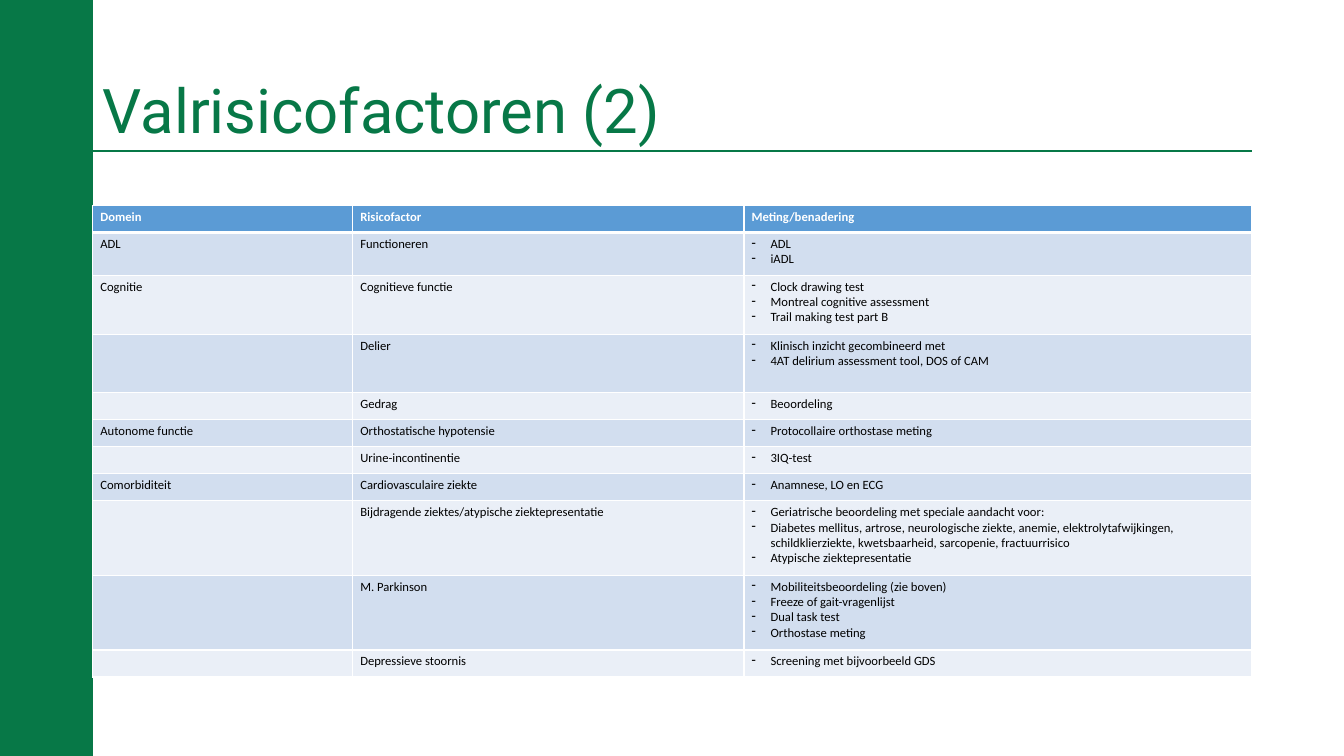
"""Build the slide on fall risk factors: a titled page with one table."""
import pptx
import pptx.dml.color
import pptx.enum.shapes
import pptx.enum.text
import pptx.oxml.ns
import pptx.util
from lxml import etree
from pptx.util import Cm, Pt

GREEN, BLUE, WHITE, BLACK = "077847", "5B9BD5", "FFFFFF", "000000"
BANDS = ("D2DEEF", "EAEFF7")

HEADER = ("Domein", "Risicofactor", "Meting/benadering")
RISK_FACTORS = [
    ("ADL", "Functioneren", 2, ["ADL", "iADL"]),
    ("Cognitie", "Cognitieve functie", 3,
     ["Clock drawing test", "Montreal cognitive assessment", "Trail making test part B"]),
    ("", "Delier", 3,
     ["Klinisch inzicht gecombineerd met", "4AT delirium assessment tool, DOS of CAM"]),
    ("", "Gedrag", 1, ["Beoordeling"]),
    ("Autonome functie", "Orthostatische hypotensie", 1, ["Protocollaire orthostase meting"]),
    ("", "Urine-incontinentie", 1, ["3IQ-test"]),
    ("Comorbiditeit", "Cardiovasculaire ziekte", 1, ["Anamnese, LO en ECG"]),
    ("", "Bijdragende ziektes/atypische ziektepresentatie", 4,
     ["Geriatrische beoordeling met speciale aandacht voor:",
      "Diabetes mellitus, artrose, neurologische ziekte, anemie, elektrolytafwijkingen, "
      "schildklierziekte, kwetsbaarheid, sarcopenie, fractuurrisico",
      "Atypische ziektepresentatie"]),
    ("", "M. Parkinson", 4,
     ["Mobiliteitsbeoordeling (zie boven)", "Freeze of gait-vragenlijst",
      "Dual task test", "Orthostase meting"]),
    ("", "Depressieve stoornis", 1, ["Screening met bijvoorbeeld GDS"]),
]


def color(value):
    return pptx.dml.color.RGBColor.from_string(value)


def add_element(parent, tag, **attributes):
    return etree.SubElement(parent, pptx.oxml.ns.qn(tag), attributes)


class RiskSlide:
    """Hold the style and the current page, and draw its elements."""

    title_font, table_font, table_size = "Roboto", "Calibri", 9
    row_padding, line_height = 0.28, 0.4

    def __init__(self, page):
        self.page = page

    def panel(self, left, top, width, height, fill):
        box = self.page.shapes.add_shape(
            pptx.enum.shapes.MSO_SHAPE.RECTANGLE, Cm(left), Cm(top), Cm(width), Cm(height))
        box.shadow.inherit = False
        box.fill.solid()
        box.fill.fore_color.rgb = color(fill)
        box.line.fill.background()

    def rule(self, left, right, top, stroke):
        line = self.page.shapes.add_connector(
            pptx.enum.shapes.MSO_CONNECTOR.STRAIGHT, Cm(left), Cm(top), Cm(right), Cm(top))
        line.line.color.rgb = color(stroke)
        line.line.width = Pt(1.5)
        add_element(line._element.spPr, "a:effectLst")

    def title(self, text, left, top, width, height):
        box = self.page.shapes.add_textbox(Cm(left), Cm(top), Cm(width), Cm(height))
        frame = box.text_frame
        frame.word_wrap = True
        frame.vertical_anchor = pptx.enum.text.MSO_ANCHOR.MIDDLE
        para = frame.paragraphs[0]
        para.text = text
        para.line_spacing = 0.9
        self.style(para, self.title_font, 44, GREEN)

    def style(self, para, name, size, ink, bold=False):
        font = para.font
        font.name, font.size, font.bold = name, Pt(size), bold
        font.color.rgb = color(ink)

    def cell(self, cell, lines, fill, ink, bold=False, bullets=False, top=1, bottom=1):
        cell.margin_left = cell.margin_right = Cm(0.19)
        cell.margin_top = cell.margin_bottom = Cm(0.1)
        properties = cell._tc.get_or_add_tcPr()
        for side, width in zip("LRTB", (1, 1, top, bottom)):
            border = add_element(properties, f"a:ln{side}", w=str(Pt(width)))
            add_element(add_element(border, "a:solidFill"), "a:srgbClr", val=WHITE)
        cell.fill.solid()
        cell.fill.fore_color.rgb = color(fill)
        cell.text = "\n".join(lines)
        for para in cell.text_frame.paragraphs:
            if bullets:
                layout = para._p.get_or_add_pPr()
                layout.set("marL", str(Cm(0.48)))
                layout.set("indent", str(-Cm(0.48)))
                add_element(layout, "a:buChar", char="-")
            self.style(para, self.table_font, self.table_size, ink, bold)
            if not para.runs:
                add_element(para._p, "a:endParaRPr", sz=str(self.table_size * 100))

    def table(self, left, top, widths, header, entries):
        heights = [self.row_padding + self.line_height * count
                   for count in [1] + [entry[2] for entry in entries]]
        grid = self.page.shapes.add_table(
            len(heights), len(widths), Cm(left), Cm(top),
            Cm(sum(widths)), Cm(sum(heights))).table
        for column, width in zip(grid.columns, widths):
            column.width = Cm(width)
        for row, height in zip(grid.rows, heights):
            row.height = Cm(height)
        for column, heading in enumerate(header):
            self.cell(grid.cell(0, column), [heading], BLUE, WHITE, bold=True, bottom=3)
        for row, (domain, factor, _, methods) in enumerate(entries, start=1):
            for column, lines in enumerate(([domain], [factor], methods)):
                self.cell(grid.cell(row, column), lines, BANDS[(row - 1) % 2], BLACK,
                          bullets=column == 2, top=3 if row == 1 else 1)


def main():
    deck = pptx.Presentation()
    deck.slide_width, deck.slide_height = Cm(33.87), Cm(19.05)
    slide = RiskSlide(deck.slides.add_slide(deck.slide_layouts[6]))
    slide.panel(0, 0, 2.34, 19.05, GREEN)
    slide.rule(2.34, 31.55, 3.81, GREEN)
    slide.title("Valrisicofactoren (2)", 2.34, 1.02, 29.21, 3.68)
    slide.table(2.34, 5.18, (6.55, 9.86, 12.8), HEADER, RISK_FACTORS)
    deck.save("out.pptx")


if __name__ == "__main__":
    main()
